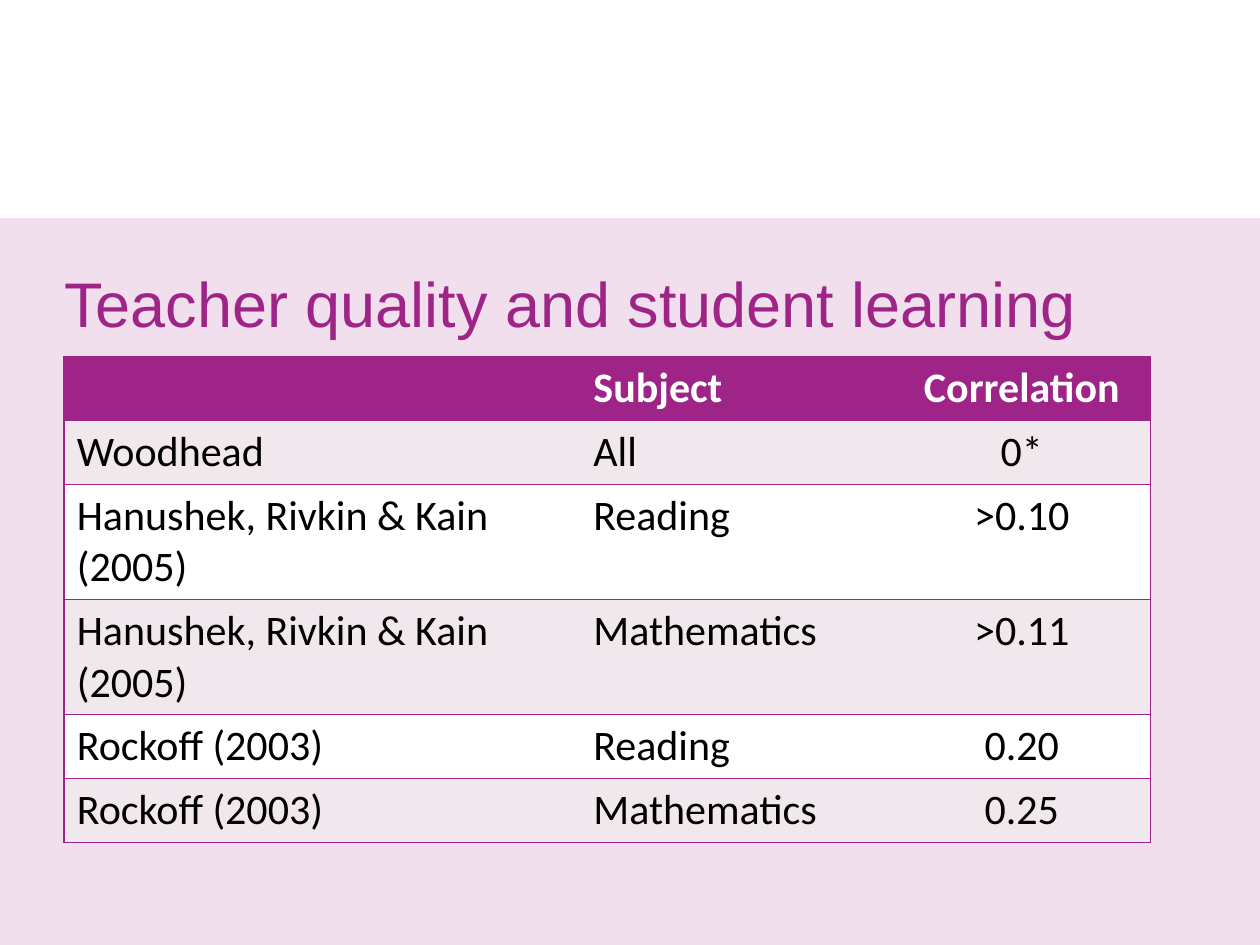
from lxml import etree
from pptx import Presentation
from pptx.dml.color import RGBColor
from pptx.enum.shapes import MSO_SHAPE
from pptx.enum.text import MSO_ANCHOR, PP_ALIGN
from pptx.oxml.ns import qn
from pptx.util import Pt

RECT = MSO_SHAPE.RECTANGLE
MIDDLE = MSO_ANCHOR.MIDDLE
LEFT, CENTER = PP_ALIGN.LEFT, PP_ALIGN.CENTER

PURPLE = RGBColor(0x9E, 0x24, 0x87)
PINK = RGBColor(0xF1, 0xDF, 0xED)
BAND = RGBColor(0xF0, 0xE8, 0xED)
WHITE = RGBColor(0xFF, 0xFF, 0xFF)
BLACK = RGBColor(0, 0, 0)

COL_WIDTHS = (295.2, 178.5, 147)
ROW_HEIGHT = 29.2
ROWS = (
    ("", "Subject", "Correlation"),
    ("Woodhead", "All", "0*"),
    ("Hanushek, Rivkin & Kain (2005)", "Reading", ">0.10"),
    ("Hanushek, Rivkin & Kain (2005)", "Mathematics", ">0.11"),
    ("Rockoff (2003)", "Reading", "0.20"),
    ("Rockoff (2003)", "Mathematics", "0.25"),
)


def write(tf, text, font="Calibri", size=24, color=BLACK, bold=False, align=LEFT):
    """Write one formatted paragraph into a text frame."""
    p = tf.paragraphs[0]
    p.alignment = align
    p.font.size = Pt(size)
    if text:
        r = p.add_run()
        r.text = text
        r.font.name, r.font.size, r.font.bold = font, Pt(size), bold
        r.font.color.rgb = color


def set_borders(cell, sides):
    """Draw the named sides of a cell in purple and clear the others."""
    tc_pr = cell._tc.get_or_add_tcPr()
    for i, side in enumerate("LRTB"):
        ln = etree.Element(qn(f"a:ln{side}"), w=str(Pt(1)))
        if side in sides:
            fill = etree.SubElement(ln, qn("a:solidFill"))
            etree.SubElement(fill, qn("a:srgbClr"), val=str(PURPLE))
        else:
            etree.SubElement(ln, qn("a:noFill"))
        tc_pr.insert(i, ln)


def add_panel(s, x, y, w, h):
    """Place the pink panel behind everything else."""
    sp = s.shapes.add_shape(RECT, Pt(x), Pt(y), Pt(w), Pt(h))
    sp.shadow.inherit = False
    sp.fill.solid()
    sp.fill.fore_color.rgb = PINK
    sp.line.fill.background()
    s.shapes._spTree.insert(2, sp._element)


def add_title(s, text, x, y, w, h):
    """Move and format the title placeholder."""
    sp = s.shapes.title
    sp.left, sp.top, sp.width, sp.height = Pt(x), Pt(y), Pt(w), Pt(h)
    tf = sp.text_frame
    tf.margin_left = tf.margin_right = tf.margin_top = tf.margin_bottom = 0
    tf.vertical_anchor = MIDDLE
    tf.word_wrap = True
    write(tf, text, font="Arial", size=36, color=PURPLE)


def add_study_table(s, x, y):
    """Place the banded table of studies with its top left corner at x, y."""
    last = len(COL_WIDTHS) - 1
    frame = s.shapes.add_table(len(ROWS), len(COL_WIDTHS), Pt(x), Pt(y),
                               Pt(sum(COL_WIDTHS)), Pt(ROW_HEIGHT * len(ROWS)))
    table = frame.table
    for col, width in zip(table.columns, COL_WIDTHS):
        col.width = Pt(width)
    for i, row in enumerate(ROWS):
        table.rows[i].height = Pt(ROW_HEIGHT)
        header = i == 0
        fill = PURPLE if header else BAND if i % 2 else WHITE
        for j, text in enumerate(row):
            cell = table.cell(i, j)
            cell.fill.solid()
            cell.fill.fore_color.rgb = fill
            set_borders(cell, "TB" + "L" * (j == 0) + "R" * (j == last))
            write(cell.text_frame, text, color=WHITE if header else BLACK,
                  bold=header, align=CENTER if j == last else LEFT)


def main():
    """Build and save the slide."""
    prs = Presentation()
    prs.slide_width, prs.slide_height = Pt(720), Pt(540)
    s = prs.slides.add_slide(prs.slide_layouts.get_by_name("Title Only"))
    add_panel(s, 0, 124.6, 720, 415.4)
    add_title(s, "Teacher quality and student learning", 36.7, 147.6, 658, 50.4)
    add_study_table(s, 36.7, 203.8)
    prs.save("out.pptx")


if __name__ == "__main__":
    main()
